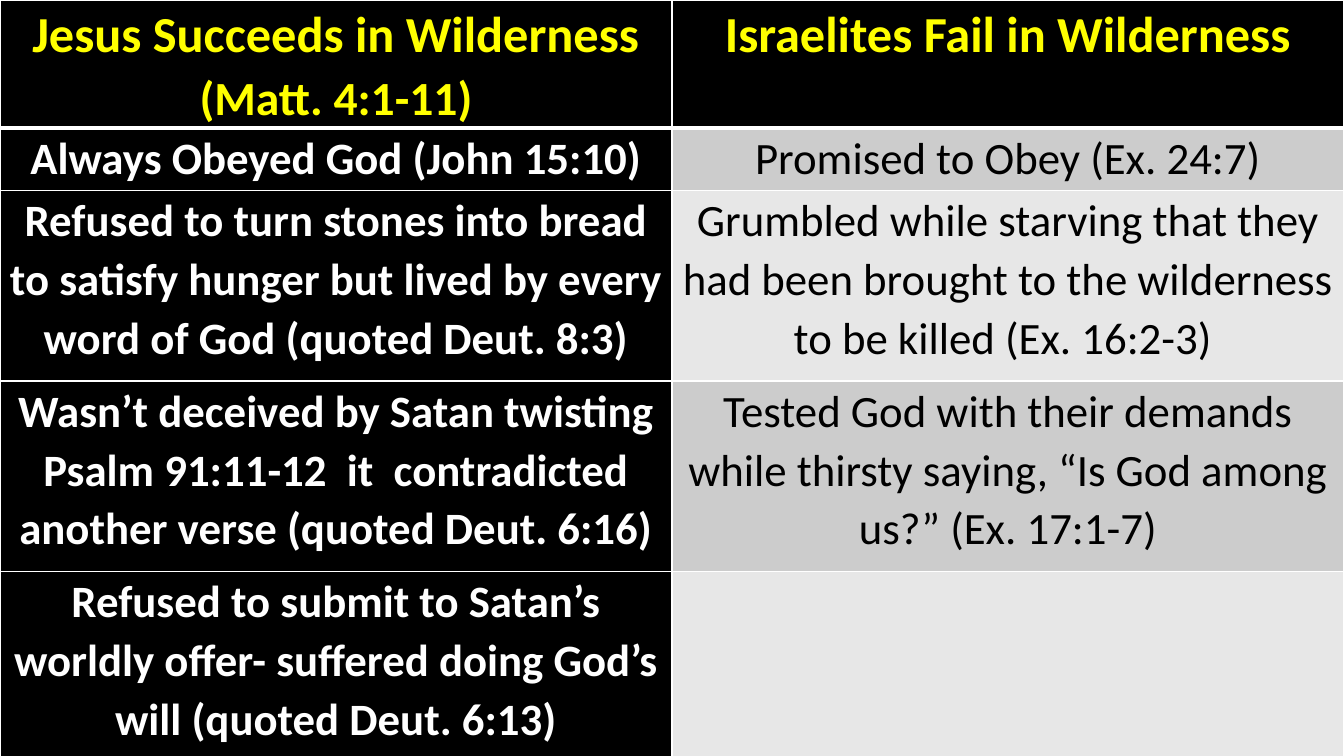
from lxml import etree
from pptx import Presentation
from pptx import util as u
from pptx.dml.color import RGBColor
from pptx.enum import text
from pptx.oxml import ns

# Content: each cell is a list of (text, size) runs
HEADINGS = [
    [("Jesus Succeeds in Wilderness ", 36), ("(Matt. 4:1-11)", 34)],
    [("Israelites Fail in Wilderness", 36)],
]
COMPARISONS = [
    ("Always Obeyed God (John 15:10)", "Promised to Obey (Ex. 24:7)"),
    ("Refused to turn stones into bread to satisfy hunger but lived by every "
     "word of God (quoted Deut. 8:3)",
     "Grumbled while starving that they had been brought to the wilderness "
     "to be killed (Ex. 16:2-3) "),
    ("Wasn’t deceived by Satan twisting Psalm 91:11-12  it  contradicted "
     "another verse (quoted Deut. 6:16)",
     "Tested God with their demands while thirsty saying, “Is God among us?” "
     "(Ex. 17:1-7)"),
    ("Refused to submit to Satan’s worldly offer- suffered doing God’s will "
     "(quoted Deut. 6:13)", ""),
]
ROW_HEIGHTS = [0.92, 0.62, 1.89, 1.89, 1.89]
WIDTH, HEIGHT = 13.33, 7.5
BODY_SIZE = 32
BLACK, WHITE, YELLOW = "000000", "FFFFFF", "FFFF00"
BANDS = ["CCCCCC", "E7E7E7"]
CELL_FORMAT = {
    "margin_left": u.Inches(0.07), "margin_right": u.Inches(0.07),
    "margin_top": 0, "margin_bottom": 0,
}
PARAGRAPH_FORMAT = {"alignment": text.PP_ALIGN.CENTER, "line_spacing": 1.07}


def color(value):
    return RGBColor.from_string(value)


def apply(target, values):
    for name, value in values.items():
        setattr(target, name, value)


def set_borders(cell, widths):
    """Put the four border lines ahead of the cell's fill."""
    properties = cell._tc.get_or_add_tcPr()
    for index, (side, points) in enumerate(widths.items()):
        line = etree.Element(ns.qn(f"a:ln{side}"), w=str(u.Pt(points)))
        fill = etree.SubElement(line, ns.qn("a:solidFill"))
        etree.SubElement(fill, ns.qn("a:srgbClr"), val=WHITE)
        properties.insert(index, line)


def fill_cell(cell, runs, fill, font_color, bold):
    apply(cell, CELL_FORMAT)
    cell.fill.solid()
    cell.fill.fore_color.rgb = color(fill)
    paragraph = cell.text_frame.paragraphs[0]
    apply(paragraph, PARAGRAPH_FORMAT)
    for words, size in runs:
        run = paragraph.add_run()
        run.text = words
        apply(run.font, {"name": "Calibri", "size": u.Pt(size), "bold": bold})
        run.font.color.rgb = color(font_color)


def main():
    presentation = Presentation()
    presentation.slide_width = u.Inches(WIDTH)
    presentation.slide_height = u.Inches(HEIGHT)
    slide = presentation.slides.add_slide(presentation.slide_layouts[6])
    slide.background.fill.solid()
    slide.background.fill.fore_color.rgb = color(BLACK)

    # Comparison table across the whole slide
    table = slide.shapes.add_table(
        len(ROW_HEIGHTS), len(HEADINGS), 0, 0,
        u.Inches(WIDTH), u.Inches(sum(ROW_HEIGHTS))).table
    for row, height in zip(table.rows, ROW_HEIGHTS):
        row.height = u.Inches(height)
    for column in table.columns:
        column.width = u.Inches(WIDTH / len(HEADINGS))

    # Headings
    for column, runs in enumerate(HEADINGS):
        fill_cell(table.cell(0, column), runs, BLACK, YELLOW, True)

    # Dark left column, banded right column
    for row, (success, failure) in enumerate(COMPARISONS, start=1):
        fill_cell(table.cell(row, 0), [(success, BODY_SIZE)], BLACK, WHITE, True)
        failure_runs = [(failure, BODY_SIZE)] if failure else []
        band = BANDS[(row - 1) % len(BANDS)]
        fill_cell(table.cell(row, 1), failure_runs, band, BLACK, False)

    # White grid with a thick rule under the headings
    for row in range(len(ROW_HEIGHTS)):
        widths = {"L": 1, "R": 1, "T": 3 if row == 1 else 1, "B": 3 if row == 0 else 1}
        for column in range(len(HEADINGS)):
            set_borders(table.cell(row, column), widths)

    presentation.save("out.pptx")


if __name__ == "__main__":
    main()
